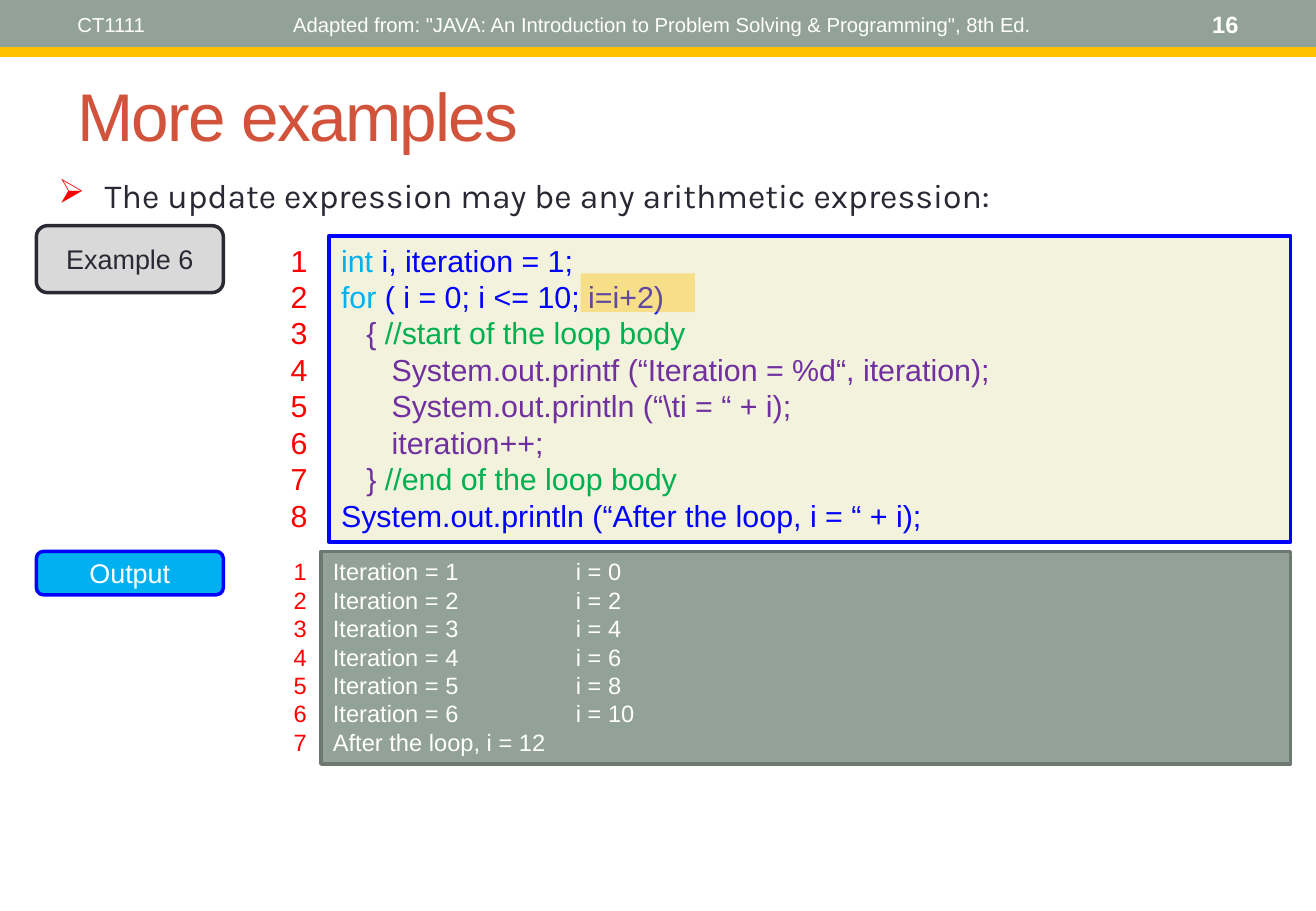
from lxml.etree import SubElement
from pptx import Presentation
from pptx.dml.color import RGBColor
from pptx.enum.shapes import MSO_CONNECTOR, MSO_SHAPE
from pptx.enum.text import MSO_ANCHOR, PP_ALIGN
from pptx.oxml.ns import qn
from pptx.util import Cm, Pt

WHITE, DARK, RED, BLUE = "FFFFFF", "292934", "FF0000", "0000FF"
SAGE, GOLD, SKY, PLUM, GREEN = "93A299", "FFC000", "00B0F0", "7030A0", "00B050"
LEFT, MID, RIGHT = PP_ALIGN.LEFT, PP_ALIGN.CENTER, PP_ALIGN.RIGHT
WIDE, HIGH = 27.51, 19.05


def color(code):
    return RGBColor.from_string(code)


class Deck:
    font = "Arial"

    def __init__(self):
        self.file = Presentation()
        self.file.slide_width, self.file.slide_height = Cm(WIDE), Cm(HIGH)
        self.slide = self.file.slides.add_slide(self.file.slide_layouts[6])

    def shape(self, box, fill, edge=None, width=2.08, kind=MSO_SHAPE.RECTANGLE, alpha=None):
        item = self.slide.shapes.add_shape(kind, *map(Cm, box))
        item.shadow.inherit = False
        item.fill.solid()
        item.fill.fore_color.rgb = color(fill)
        if alpha:
            tint = item._element.spPr.find(".//" + qn("a:srgbClr"))
            SubElement(tint, qn("a:alpha"), val=str(alpha * 1000))
        if edge:
            item.line.color.rgb = color(edge)
            item.line.width = Pt(width)
        else:
            item.line.fill.background()
        return item

    def rule(self, y, hue, width):
        line = self.slide.shapes.add_connector(MSO_CONNECTOR.STRAIGHT, 0, Cm(y), Cm(WIDE), Cm(y))
        line.line.color.rgb = color(hue)
        line.line.width = Pt(width)
        SubElement(line._element.spPr, qn("a:effectLst"))

    def box(self, box):
        return self.slide.shapes.add_textbox(*map(Cm, box))

    def text(self, item, rows, size, align=LEFT, anchor=MSO_ANCHOR.TOP, font=None, bold=False):
        """Each row is a list of (words, colour) runs."""
        frame = item.text_frame
        frame.word_wrap = True
        frame.vertical_anchor = anchor
        for i, row in enumerate(rows):
            para = frame.add_paragraph() if i else frame.paragraphs[0]
            para.alignment = align
            if len(rows) > 1:
                para.line_spacing = Pt(size * 1.2)
            for words, hue in row:
                run = para.add_run()
                run.text = words
                run.font.name = font or self.font
                run.font.size = Pt(size)
                run.font.bold = bold
                run.font.color.rgb = color(hue)
        return frame.paragraphs

    def line(self, box, words, size, hue, **style):
        return self.text(self.box(box), [[(words, hue)]], size, anchor=MSO_ANCHOR.MIDDLE, **style)[0]

    def label(self, box, words, hue, fill, edge):
        item = self.shape(box, fill, edge, kind=MSO_SHAPE.ROUNDED_RECTANGLE)
        self.text(item, [[(words, hue)]], 16, MID, MSO_ANCHOR.MIDDLE)

    def bullet(self, para, mark, hue, indent):
        props = para._p.get_or_add_pPr()
        props.set("marL", str(Cm(indent)))
        props.set("indent", str(-Cm(indent)))
        SubElement(SubElement(props, qn("a:buClr")), qn("a:srgbClr"), val=hue)
        SubElement(props, qn("a:buChar"), char=mark)

    def tab(self, para, stop):
        tabs = SubElement(para._p.get_or_add_pPr(), qn("a:tabLst"))
        SubElement(tabs, qn("a:tab"), pos=str(Cm(stop)), algn="l")


def count(last):
    return [[(str(n), RED)] for n in range(1, last + 1)]


def main():
    deck = Deck()

    # Header band
    deck.shape((0, 0, WIDE, 1.02), SAGE)
    deck.rule(1.09, GOLD, 6)
    deck.line((1.37, 0.05, 8.71, 0.91), "CT1111", 12, WHITE)
    source = 'Adapted from: "JAVA: An Introduction to Problem Solving & Programming", 8th Ed.'
    deck.line((5, 0.05, 17.7, 0.91), source, 12, WHITE, align=MID)
    deck.line((22.94, 0.05, 3.2, 0.91), "16", 14, WHITE, align=RIGHT, bold=True)

    # Title
    title = deck.line((1.37, 1.02, 24.77, 2.74), "More examples", 40, "D2533C")
    title.runs[0].font._element.set("spc", "-100")

    # Code with line numbers
    code = [
        [("int ", SKY), ("i, iteration = 1;", BLUE)],
        [("for ", SKY), ("( i = 0; i <= 10; i=i+2)", BLUE)],
        [("   { ", PLUM), ("//start of the loop body", GREEN)],
        [("      System.out.printf (“Iteration = %d“, iteration);", PLUM)],
        [("      System.out.println (“\\ti = “ + i);", PLUM)],
        [("      iteration++;", PLUM)],
        [("   } ", PLUM), ("//end of the loop body", GREEN)],
        [("System.out.println (“After the loop, i = “ + i);", BLUE)],
    ]
    deck.text(deck.shape((6.88, 4.93, 20.1, 6.4), "F3F2DC", BLUE, 2.25), code, 18)
    deck.text(deck.box((5.08, 4.93, 1.6, 6.4)), count(len(code)), 18, RIGHT)
    deck.label((0.76, 4.72, 3.91, 1.4), "Example 6", DARK, "D9D9D9", DARK)

    # Program output with line numbers
    out = [[(f"Iteration = {n}\ti = {2 * n - 2}", WHITE)] for n in range(1, 7)]
    out.append([("After the loop, i = 12", WHITE)])
    panel = deck.shape((6.71, 11.53, 20.27, 4.45), SAGE, "6D7871")
    for para in deck.text(panel, out, 14)[:-1]:
        deck.tab(para, 5.08)
    deck.text(deck.shape((5.89, 11.53, 0.61, 4.45), WHITE, WHITE), count(len(out)), 14)
    deck.label((0.76, 11.53, 3.91, 0.91), "Output", WHITE, SKY, BLUE)

    # Lead statement
    lead = [[("The update expression may be any arithmetic expression:", DARK)]]
    para = deck.text(deck.box((0.97, 3.53, 26.01, 1.12)), lead, 20, font="Karla")[0]
    deck.bullet(para, "➢", RED, 0.97)

    # Highlight on the update expression
    deck.shape((12.14, 5.72, 2.39, 0.81), GOLD, alpha=38)

    deck.file.save("out.pptx")


if __name__ == "__main__":
    main()
